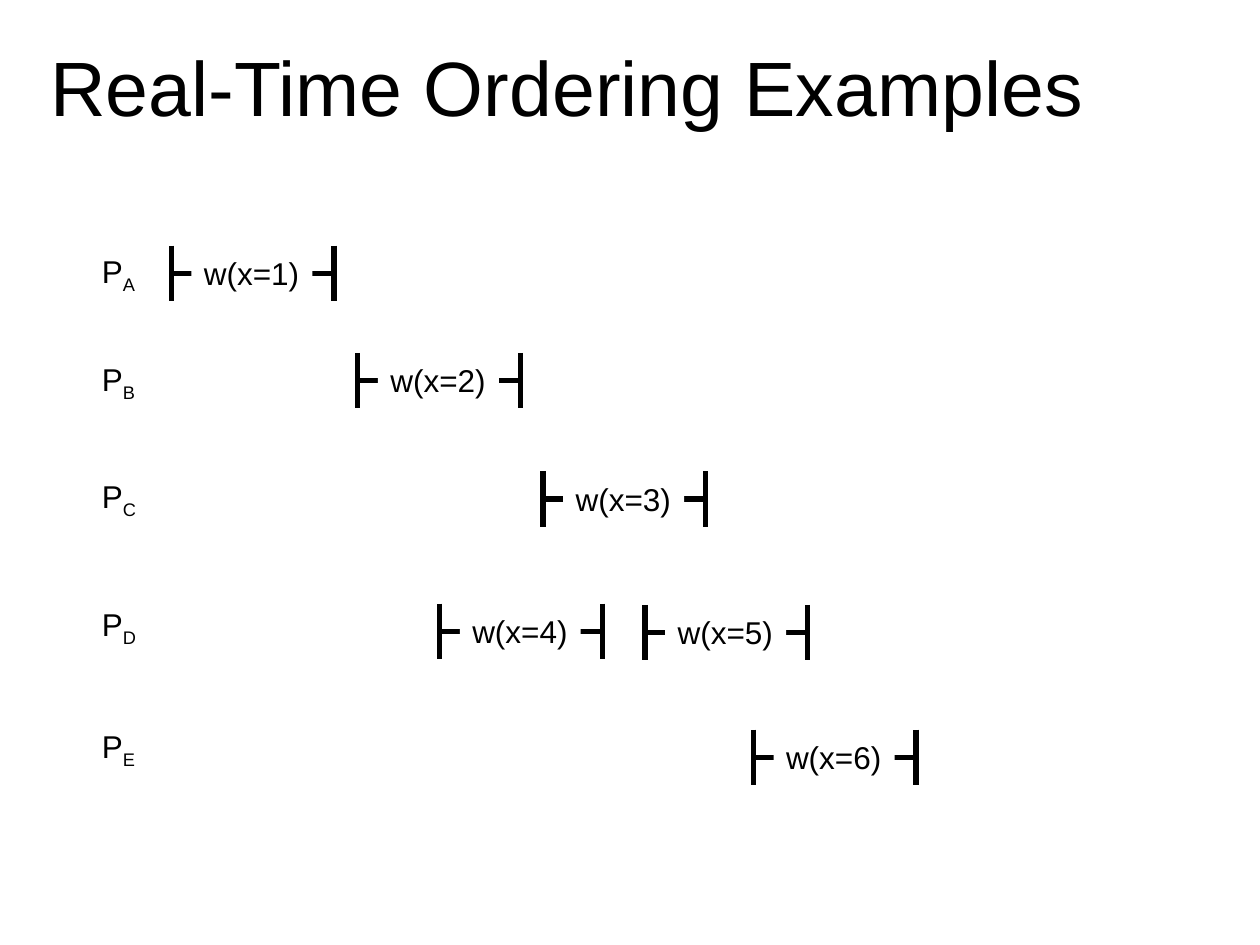
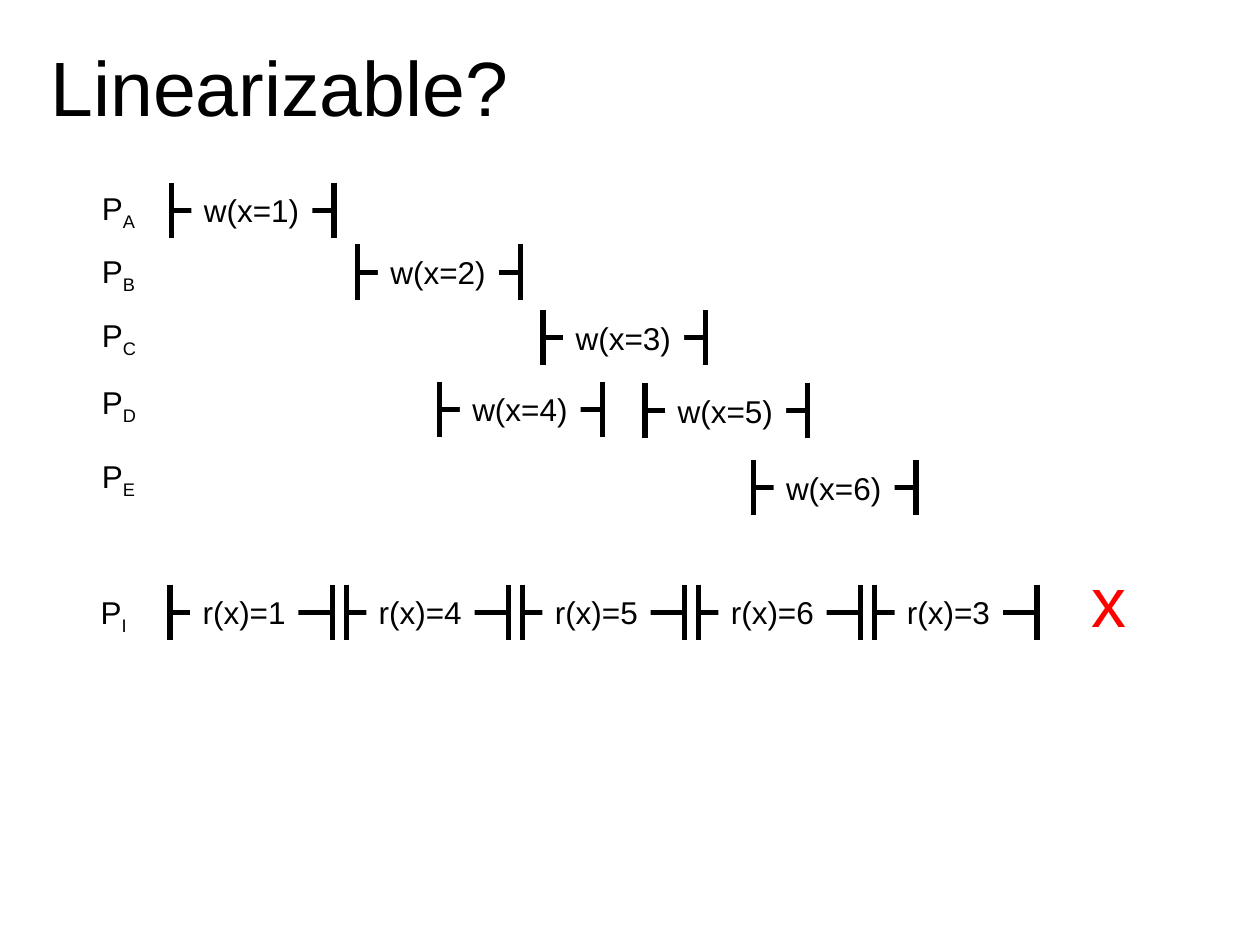
from dataclasses import dataclass

import lxml.etree
import pptx
import pptx.dml.color
import pptx.enum.shapes
import pptx.enum.text
import pptx.oxml.ns
import pptx.presentation
import pptx.shapes.autoshape
import pptx.shapes.shapetree
import pptx.slide
import pptx.text.text
import pptx.util
from pptx.util import Inches

FONT = "Arial"
BLACK = "000000"
WHITE = "FFFFFF"
RED = "FF0000"
TITLE_SIZE = 44
TEXT_SIZE = 18
VERDICT_SIZE = 40
LINE_WIDTH = 3

INTERVAL_WIDTH = 1.29
BAR_HEIGHT = 0.44
TEXT_HEIGHT = 0.4
TEXT_INDENT = 0.16
WRITE_WIDTH = 0.96
READ_WIDTH = 0.86


@dataclass(frozen=True)
class Operation:
    text: str
    left: float
    text_width: float = WRITE_WIDTH
    drop: float = 0


@dataclass(frozen=True)
class Process:
    subscript: str
    operations: tuple[Operation, ...]
    label_left: float = 0.71
    label_width: float = 0.49
    line_offset: float = 0.22


READ_RESULTS = (1, 4, 5, 6, 3)
FIRST_READ_LEFT = 1.35
LAST_READ_LEFT = 6.94
READ_STEP = (LAST_READ_LEFT - FIRST_READ_LEFT) / (len(READ_RESULTS) - 1)

WRITERS = (
    Process("A", (Operation("w(x=1)", 1.36),)),
    Process("B", (Operation("w(x=2)", 2.84),), line_offset=0.21),
    Process("C", (Operation("w(x=3)", 4.31),)),
    Process(
        "D",
        (Operation("w(x=4)", 3.49), Operation("w(x=5)", 5.12, drop=0.01)),
        line_offset=0.26,
    ),
    Process("E", (Operation("w(x=6)", 5.98),), line_offset=0.29),
)
READER = Process(
    "I",
    tuple(
        Operation(f"r(x)={result}", FIRST_READ_LEFT + index * READ_STEP, READ_WIDTH)
        for index, result in enumerate(READ_RESULTS)
    ),
    label_left=0.7,
    label_width=0.42,
    line_offset=0.2,
)

ORDERING_TOPS = (1.95, 2.81, 3.74, 4.75, 5.72)
LINEARIZABLE_TOPS = (1.45, 1.95, 2.46, 2.99, 3.58)
READER_TOP = 4.66


def color(value: str) -> pptx.dml.color.RGBColor:
    return pptx.dml.color.RGBColor.from_string(value)


def format_runs(
    paragraph: pptx.text.text._Paragraph, size: float, font_color: str = BLACK
) -> None:
    for run in paragraph.runs:
        run.font.name = FONT
        run.font.size = pptx.util.Pt(size)
        run.font.color.rgb = color(font_color)


def add_title_slide(
    presentation: pptx.presentation.Presentation, text: str
) -> pptx.slide.Slide:
    slide = presentation.slides.add_slide(presentation.slide_layouts[5])
    title = slide.shapes.title
    title.left, title.top = Inches(0.3), Inches(0)
    title.width, title.height = Inches(9.4), Inches(1.45)
    title.text_frame.text = text
    title.text_frame.vertical_anchor = pptx.enum.text.MSO_ANCHOR.MIDDLE
    paragraph = title.text_frame.paragraphs[0]
    paragraph.alignment = pptx.enum.text.PP_ALIGN.LEFT
    paragraph.line_spacing = 0.9
    format_runs(paragraph, TITLE_SIZE)
    return slide


def add_line(
    shapes: pptx.shapes.shapetree._BaseGroupShapes,
    start: tuple[float, float],
    end: tuple[float, float],
) -> None:
    connector = shapes.add_connector(
        pptx.enum.shapes.MSO_CONNECTOR.STRAIGHT,
        *(Inches(value) for value in start + end),
    )
    connector.line.color.rgb = color(BLACK)
    connector.line.width = pptx.util.Pt(LINE_WIDTH)
    lxml.etree.SubElement(
        connector._element.spPr, pptx.oxml.ns.qn("a:effectLst")
    )


def add_text(
    shapes: pptx.shapes.shapetree._BaseGroupShapes,
    text: str,
    left: float,
    top: float,
    width: float,
) -> pptx.shapes.autoshape.Shape:
    shape = shapes.add_textbox(
        Inches(left), Inches(top), Inches(width), Inches(TEXT_HEIGHT)
    )
    shape.text_frame.text = text
    shape.text_frame.word_wrap = False
    shape.text_frame.auto_size = pptx.enum.text.MSO_AUTO_SIZE.SHAPE_TO_FIT_TEXT
    format_runs(shape.text_frame.paragraphs[0], TEXT_SIZE)
    return shape


def add_operation(
    slide: pptx.slide.Slide, operation: Operation, middle: float
) -> None:
    shapes = slide.shapes.add_group_shape().shapes
    left, right = operation.left, operation.left + INTERVAL_WIDTH
    add_line(shapes, (left, middle), (right, middle))
    for end in (left, right):
        add_line(
            shapes,
            (end, middle - BAR_HEIGHT / 2),
            (end, middle + BAR_HEIGHT / 2),
        )
    label = add_text(
        shapes,
        operation.text,
        left + TEXT_INDENT,
        middle - TEXT_HEIGHT / 2,
        operation.text_width,
    )
    label.fill.solid()
    label.fill.fore_color.rgb = color(WHITE)


def add_process(slide: pptx.slide.Slide, process: Process, top: float) -> None:
    label = add_text(
        slide.shapes, "P", process.label_left, top, process.label_width
    )
    paragraph = label.text_frame.paragraphs[0]
    subscript = paragraph.add_run()
    subscript.text = process.subscript
    format_runs(paragraph, TEXT_SIZE)
    subscript._r.get_or_add_rPr().set("baseline", "-25000")
    for operation in process.operations:
        add_operation(slide, operation, top + process.line_offset + operation.drop)


def add_writers(slide: pptx.slide.Slide, tops: tuple[float, ...]) -> None:
    for process, top in zip(WRITERS, tops):
        add_process(slide, process, top)


def add_verdict(slide: pptx.slide.Slide) -> None:
    shape = slide.shapes.add_shape(
        pptx.enum.shapes.MSO_SHAPE.ROUNDED_RECTANGLE,
        Inches(8.53),
        Inches(4.46),
        Inches(0.55),
        Inches(0.6),
    )
    shape.shadow.inherit = False
    shape.fill.background()
    shape.line.fill.background()
    text_frame = shape.text_frame
    text_frame.text = "x"
    text_frame.margin_left = text_frame.margin_right = Inches(0)
    text_frame.vertical_anchor = pptx.enum.text.MSO_ANCHOR.MIDDLE
    paragraph = text_frame.paragraphs[0]
    paragraph.alignment = pptx.enum.text.PP_ALIGN.CENTER
    paragraph.space_before = pptx.util.Pt(4)
    format_runs(paragraph, VERDICT_SIZE, RED)


def main() -> None:
    presentation = pptx.Presentation()
    presentation.slide_width = Inches(10)
    presentation.slide_height = Inches(7.5)

    ordering = add_title_slide(presentation, "Real-Time Ordering Examples")
    add_writers(ordering, ORDERING_TOPS)

    linearizable = add_title_slide(presentation, "Linearizable?")
    add_writers(linearizable, LINEARIZABLE_TOPS)
    add_process(linearizable, READER, READER_TOP)
    add_verdict(linearizable)

    presentation.save("out.pptx")


if __name__ == "__main__":
    main()
